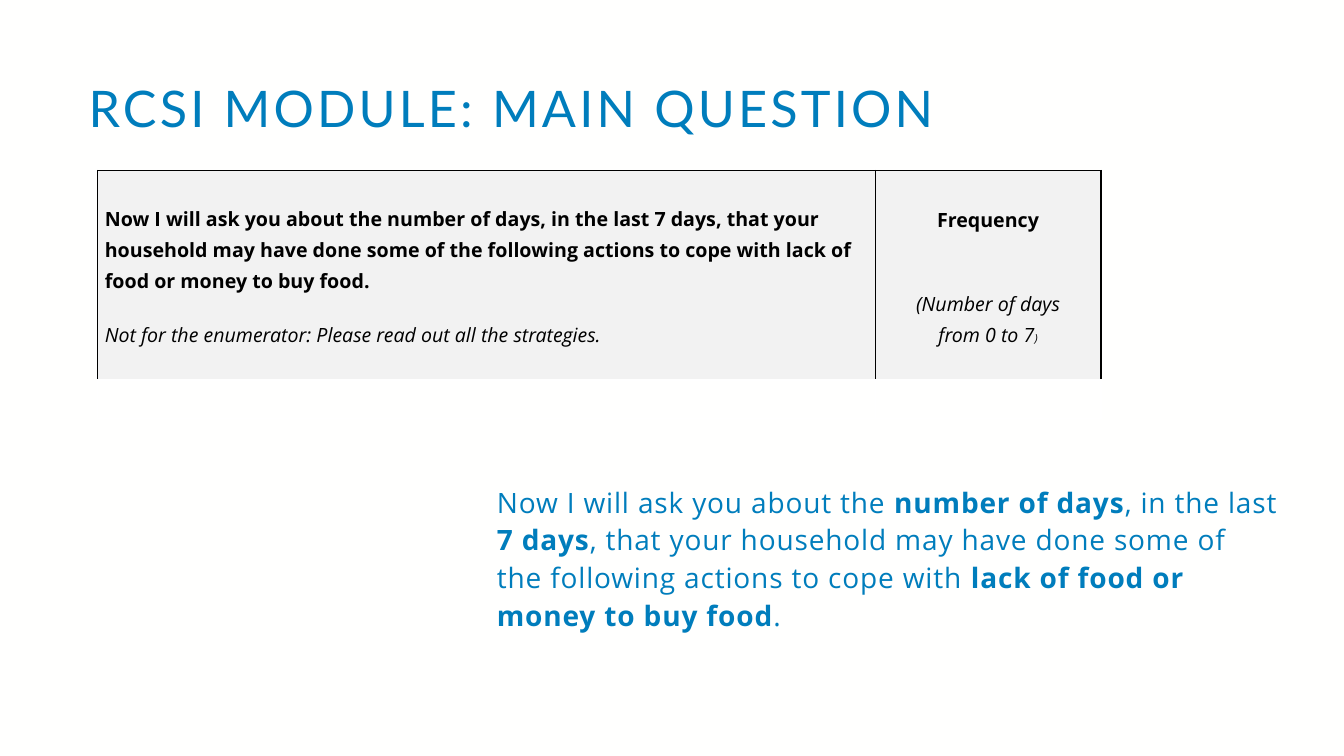
from lxml.etree import SubElement
from pptx import Presentation
from pptx.dml.color import RGBColor
from pptx.enum.text import MSO_ANCHOR, PP_ALIGN
from pptx.oxml.ns import qn
from pptx.util import Inches, Pt

BLUE = RGBColor(0x00, 0x7D, 0xBC)
BLACK = RGBColor(0x00, 0x00, 0x00)
GREY = RGBColor(0xF2, 0xF2, 0xF2)
PAPER = RGBColor(0xFF, 0xFF, 0xFE)


def add_runs(p, runs, spacing=0, **base):
    for text, changes in runs:
        r = p.add_run()
        r.text = text
        fmt = {"name": "Open Sans", "bold": False, "italic": False, **base, **changes}
        color = fmt.pop("color")
        for name, value in fmt.items():
            setattr(r.font, name, value)
        r.font.color.rgb = color
        if spacing:
            r.font._element.set("spc", str(round(spacing * 100)))


def add_text(s, box, runs, line_spacing, margin_top=0.05, **fmt):
    tf = s.shapes.add_textbox(*map(Inches, box)).text_frame
    tf.word_wrap = True
    tf.margin_top = Inches(margin_top)
    p = tf.paragraphs[0]
    p.line_spacing = line_spacing
    add_runs(p, runs, color=BLUE, **fmt)


def add_borders(cell):
    tcPr = cell._tc.get_or_add_tcPr()
    for i, side in enumerate(("lnL", "lnR", "lnT", "lnB")):
        ln = tcPr.makeelement(qn(f"a:{side}"), {"w": str(Pt(1))})
        fill = SubElement(ln, qn("a:solidFill"))
        SubElement(fill, qn("a:srgbClr"), val=str(BLACK))
        tcPr.insert(i, ln)


def fill_cell(cell, paragraphs, align):
    cell.fill.solid()
    cell.fill.fore_color.rgb = GREY
    add_borders(cell)
    tf = cell.text_frame
    for i, (runs, space_after) in enumerate(paragraphs):
        p = tf.add_paragraph() if i else tf.paragraphs[0]
        fmt = {"alignment": align, "line_spacing": 1.15, "space_after": Pt(space_after)}
        for name, value in fmt.items():
            setattr(p, name, value)
        add_runs(p, runs, size=Pt(14), color=BLACK)


def add_question_table(s, columns):
    widths, heights = (7.71, 2.24), (2.08, 0.38)
    table = s.shapes.add_table(
        2, 2, Inches(0.97), Inches(1.69), Inches(sum(widths)), Inches(sum(heights))
    ).table
    table.first_row = table.horz_banding = False
    for col, width in zip(table.columns, widths):
        col.width = Inches(width)
    for row, height in zip(table.rows, heights):
        row.height = Inches(height)
    for cell in table.iter_cells():
        cell.fill.background()
        cell.vertical_anchor = MSO_ANCHOR.MIDDLE
        cell.margin_left = cell.margin_right = Inches(0.07)
        cell.margin_top = cell.margin_bottom = 0
    for i, (paragraphs, align) in enumerate(columns):
        fill_cell(table.cell(0, i), paragraphs, align)


def main():
    prs = Presentation()
    prs.slide_width, prs.slide_height = Inches(13.33), Inches(7.5)
    s = prs.slides.add_slide(prs.slide_layouts[6])
    s.background.fill.solid()
    s.background.fill.fore_color.rgb = PAPER
    bold, italic = {"bold": True}, {"italic": True}

    add_text(s, (0.78, 0.78, 12.09, 0.72), [("RCSI MODULE: MAIN QUESTION", {})],
             0.9, name="Lato", size=Pt(36), spacing=2.3)
    add_text(s, (4.83, 3.86, 7.94, 2.65), [
        ("Now I will ask you about the ", {}),
        ("number of days", bold),
        (", in the last ", {}),
        ("7 days", bold),
        (", that your household may have done some of the following actions to cope with ", {}),
        ("lack of food or money to buy food", bold),
        (".", {}),
    ], Pt(27), margin_top=0.91, size=Pt(20), spacing=0.6)

    question = [
        ([("Now I will ask you about the number of days, in the last 7 days, that your "
           "household may have done some of the following actions to cope with lack of "
           "food or money to buy food.", bold)], 17),
        ([("Not for the enumerator: Please read out all the strategies.", italic)], 0),
    ]
    frequency = [
        ([("Frequency", bold)], 38),
        ([("(Number of days", italic)], 0),
        ([("from 0 to 7", italic), (")", {"italic": True, "size": Pt(8)})], 0),
    ]
    add_question_table(s, [(question, PP_ALIGN.LEFT), (frequency, PP_ALIGN.CENTER)])
    prs.save("out.pptx")


if __name__ == "__main__":
    main()
